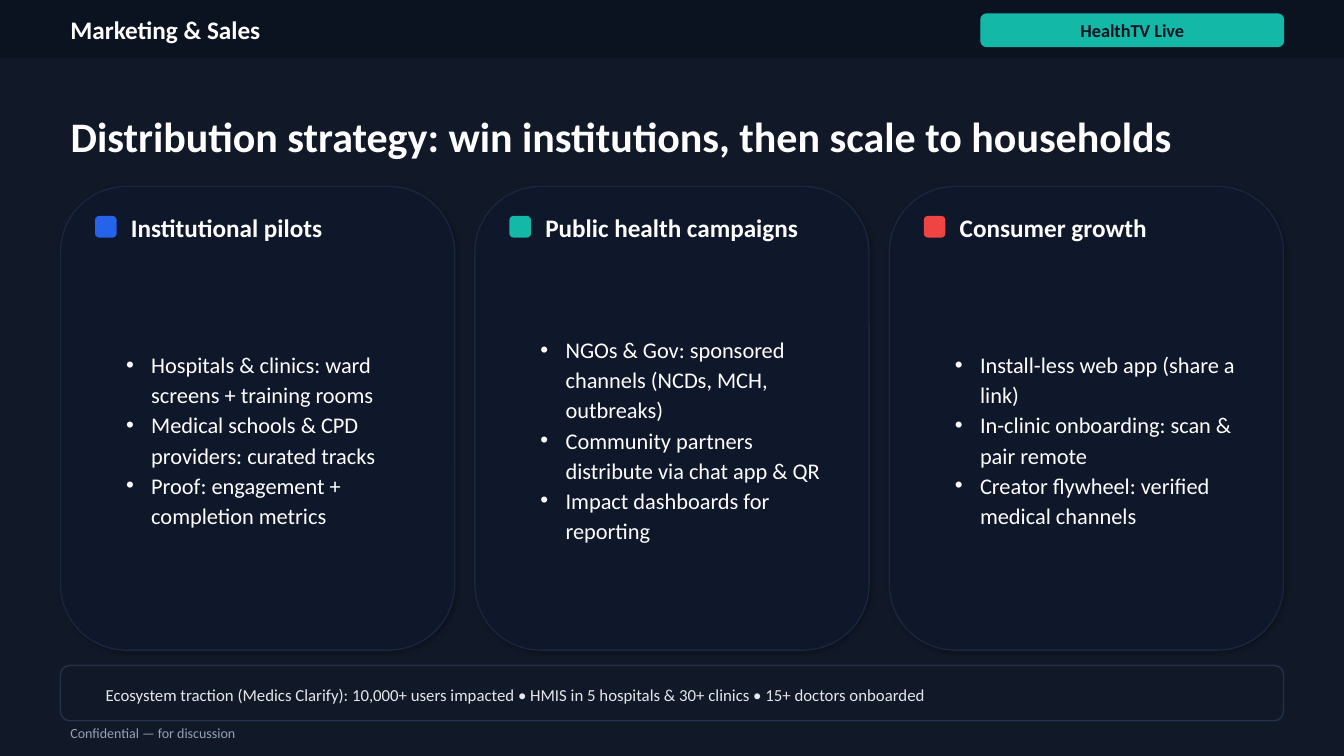
import dataclasses

import lxml.etree
import pptx
import pptx.dml.color
import pptx.enum.shapes
import pptx.enum.text
import pptx.oxml.ns
import pptx.util

Kind = pptx.enum.shapes.MSO_SHAPE
Align = pptx.enum.text.PP_ALIGN
qn = pptx.oxml.ns.qn


@dataclasses.dataclass(frozen=True)
class Theme:
    font: str = "Calibri"
    bar: str = "0B1220"
    page: str = "111827"
    card: str = "0F172A"
    edge: str = "22314D"
    white: str = "FFFFFF"
    soft: str = "E5E7EB"
    mute: str = "94A3B8"
    blue: str = "2563EB"
    teal: str = "14B8A6"
    red: str = "EF4444"
    title: int = 30
    head: int = 18
    body: int = 16
    tag: int = 13
    note: int = 12
    foot: int = 10


def shade(color):
    return pptx.dml.color.RGBColor.from_string(color)


class Deck:
    cols, rows = 133.3, 75

    def __init__(self, theme):
        self.theme = theme
        self.show = pptx.Presentation()
        self.show.slide_width = pptx.util.Inches(13.33)
        self.show.slide_height = pptx.util.Inches(7.5)
        self.slide = self.show.slides.add_slide(self.show.slide_layouts[4])

    def place(self, col, row, wide, high):
        across = self.show.slide_width / self.cols
        down = self.show.slide_height / self.rows
        return [round(n) for n in (col * across, row * down, wide * across, high * down)]

    def block(self, area, fill, edge=None, kind=Kind.ROUNDED_RECTANGLE):
        shape = self.slide.shapes.add_shape(kind, *self.place(*area))
        shape.shadow.inherit = False
        shape.fill.solid()
        shape.fill.fore_color.rgb = shade(fill)
        shape.line.color.rgb = shade(edge or fill)
        shape.line.width = pptx.util.Pt(1)
        return shape

    def panel(self, area):
        props = self.block(area, self.theme.card, self.theme.edge).element.spPr
        tint = props.find(qn("a:ln")).find(".//" + qn("a:srgbClr"))
        lxml.etree.SubElement(tint, qn("a:alpha"), val="65000")
        drop = lxml.etree.SubElement(
            props.find(qn("a:effectLst")), qn("a:outerShdw"),
            blurRad=str(pptx.util.Pt(3)), dist=str(pptx.util.Pt(1.5)),
            dir="2700000", algn="ctr", rotWithShape="0")
        black = lxml.etree.SubElement(drop, qn("a:srgbClr"), val="000000")
        lxml.etree.SubElement(black, qn("a:alpha"), val="25000")

    def fill(self, shape, lines, size, color, bold=False, align=Align.LEFT, dots=False):
        frame = shape.text_frame
        frame.word_wrap = True
        frame.auto_size = pptx.enum.text.MSO_AUTO_SIZE.NONE
        frame.vertical_anchor = pptx.enum.text.MSO_ANCHOR.MIDDLE
        frame.text = "\n".join(lines)
        for par in frame.paragraphs:
            if dots:
                self.dot(par)
            par.alignment = align
            par.font.name = self.theme.font
            par.font.size = pptx.util.Pt(size)
            par.font.bold = bold
            par.font.color.rgb = shade(color)

    def dot(self, par):
        props = par._p.get_or_add_pPr()
        indent = pptx.util.Inches(0.25)
        props.set("marL", str(indent))
        props.set("indent", str(-indent))
        lxml.etree.SubElement(props, qn("a:buChar"), char="•")
        par.line_spacing = 1.12
        par.space_before = pptx.util.Pt(0)

    def label(self, area, text, size, color, **style):
        box = self.slide.shapes.add_textbox(*self.place(*area))
        self.fill(box, [text], size, color, **style)

    def holder(self, index, area):
        shape = self.slide.placeholders[index]
        shape.left, shape.top, shape.width, shape.height = self.place(*area)
        shape.element.getparent().append(shape.element)
        return shape

    def title(self, area, text):
        self.fill(self.holder(0, area), [text], self.theme.title, self.theme.white, bold=True)

    def bullets(self, index, area, lines):
        self.fill(self.holder(index, area), lines, self.theme.body, self.theme.white, dots=True)

    def clear(self):
        for shape in list(self.slide.placeholders):
            if not shape.text_frame.text:
                shape.element.getparent().remove(shape.element)


def main():
    theme = Theme()
    deck = Deck(theme)
    edge, gap, bar = 6, 2, 5.8
    full = deck.cols - 2 * edge
    wide = (full - 2 * gap) / 3
    tag = 30
    right = edge + full - tag

    deck.block((0, 0, deck.cols, bar), theme.bar, kind=Kind.RECTANGLE)
    deck.label((edge, 1.2, full - tag - gap, 3.5), "Marketing & Sales",
               theme.head, theme.white, bold=True)
    deck.block((right, 1.4, tag, 3.2), theme.teal)
    deck.label((right, 1.6, tag, 2.8), "HealthTV Live",
               theme.tag, theme.bar, bold=True, align=Align.CENTER)
    deck.block((0, bar, deck.cols, deck.rows - bar), theme.page, kind=Kind.RECTANGLE)
    deck.title((edge, 10.5, full, 6),
               "Distribution strategy: win institutions, then scale to households")

    cards = [
        (1, theme.blue, "Institutional pilots", [
            "Hospitals & clinics: ward screens + training rooms",
            "Medical schools & CPD providers: curated tracks",
            "Proof: engagement + completion metrics"]),
        (2, theme.teal, "Public health campaigns", [
            "NGOs & Gov: sponsored channels (NCDs, MCH, outbreaks)",
            "Community partners distribute via chat app & QR",
            "Impact dashboards for reporting"]),
        (4, theme.red, "Consumer growth", [
            "Install-less web app (share a link)",
            "In-clinic onboarding: scan & pair remote",
            "Creator flywheel: verified medical channels"]),
    ]
    for place, (index, color, head, lines) in enumerate(cards):
        left = edge + place * (wide + gap)
        deck.panel((left, 18.5, wide, 46))
        deck.block((left + 3.5, 21.5, 2, 2), color)
        deck.label((left + 6, 20.8, wide - 8, 3.5), head, theme.head, theme.white, bold=True)
        deck.bullets(index, (left + 5.5, 26, wide - 9, 35), lines)

    deck.block((edge, 66, full, 5.5), theme.page, theme.edge)
    deck.label((edge + 3.5, 67.2, full - 7, 3.5),
               "Ecosystem traction (Medics Clarify): 10,000+ users impacted • "
               "HMIS in 5 hospitals & 30+ clinics • 15+ doctors onboarded",
               theme.note, theme.soft)
    deck.label((edge, 71.5, full, 2.5), "Confidential — for discussion", theme.foot, theme.mute)
    deck.clear()
    deck.show.save("out.pptx")


if __name__ == "__main__":
    main()
